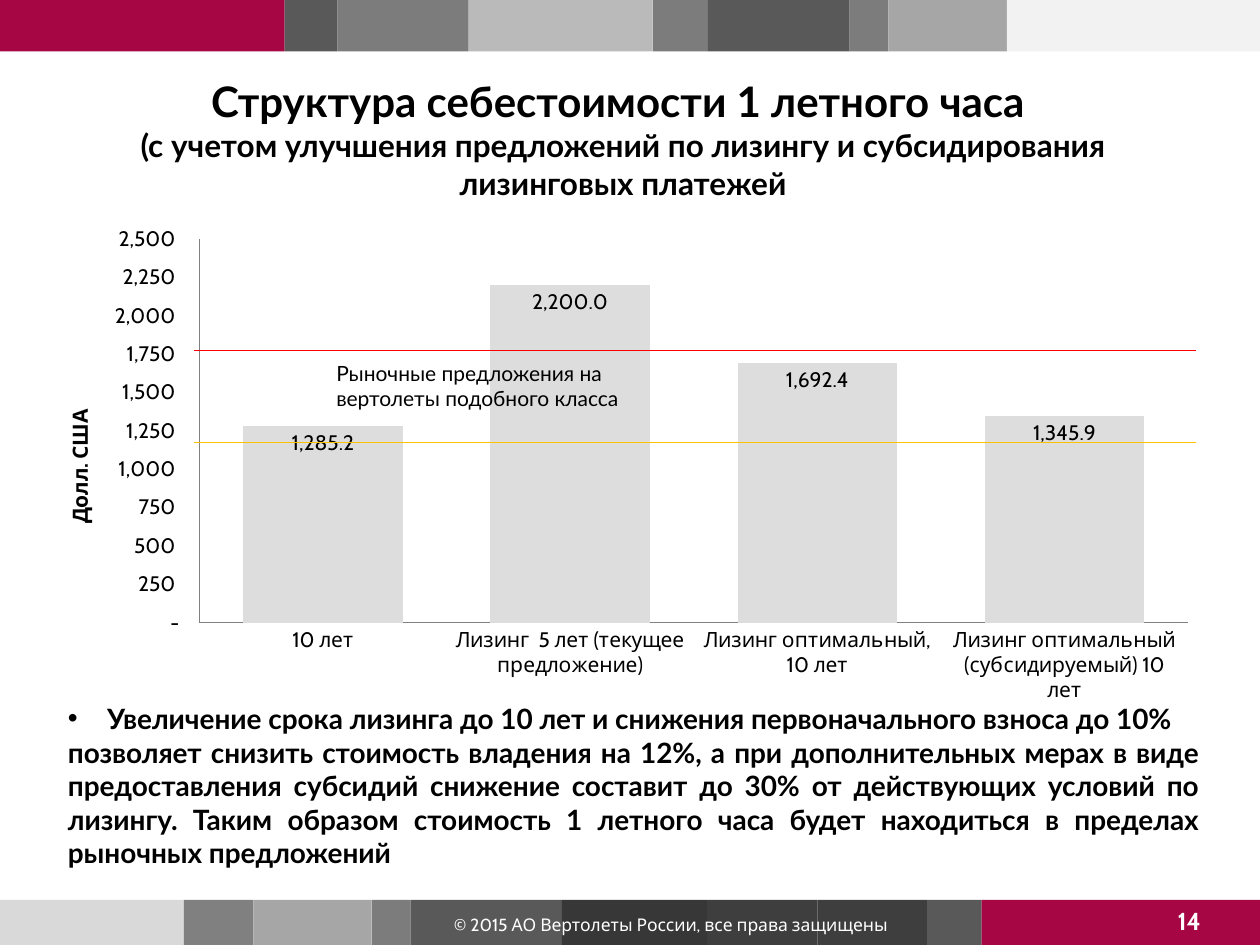
from itertools import pairwise
from lxml.etree import SubElement
from pptx import Presentation
from pptx.chart.data import CategoryChartData
from pptx.dml.color import RGBColor
from pptx.enum.chart import XL_CHART_TYPE, XL_LABEL_POSITION, XL_TICK_MARK
from pptx.enum.shapes import MSO_CONNECTOR, MSO_SHAPE
from pptx.enum.text import PP_ALIGN
from pptx.oxml import parse_xml
from pptx.oxml.ns import nsdecls, qn
from pptx.util import Cm, Pt

THEME = {
    "head": "Lato", "body": "Cabin",
    "ink": "000000", "light": "FFFFFF", "bar": "DDDDDD", "axis": "808080",
    "high": "FF0000", "low": "FFC000",
    "title": 24, "sub": 18, "main": 16, "page": 14, "label": 12, "foot": 10,
}
BANDS = [
    (0, [0, 5.74, 6.81, 9.45, 13.16, 14.27, 17.13, 17.91, 20.3, 25.4],
     ["A60643", "595959", "7C7C7C", "BABABA", "7C7C7C", "595959", "7C7C7C",
      "A6A6A6", "F2F2F2"]),
    (18.14, [0, 3.71, 5.11, 7.49, 8.28, 11.33, 14.25, 16.48, 18.69, 19.79, 25.4],
     ["D9D9D9", "808080", "A6A6A6", "7C7C7C", "595959", "373737", "3E3E3E",
      "3E3E3E", "595959", "A60643"]),
]
TITLE = "Структура себестоимости 1 летного часа "
SUB = ("(с учетом улучшения предложений по лизингу и субсидирования "
       "лизинговых платежей")
POINT = ("Увеличение срока лизинга до 10 лет и снижения первоначального "
         "взноса до 10%")
REST = ("позволяет снизить стоимость владения на 12%, а при дополнительных "
        "мерах в виде предоставления субсидий снижение составит до 30% от "
        "действующих условий по лизингу. Таким образом стоимость 1 летного "
        "часа будет находиться в пределах рыночных предложений")
NOTE = "Рыночные предложения на вертолеты подобного класса"
FOOT = "© 2015 АО Вертолеты России, все права защищены"
PAGE = "14"
UNIT = "Долл. США"
COSTS = [
    ("10 лет", 1285.2),
    ("Лизинг  5 лет (текущее предложение)", 2200),
    ("Лизинг оптимальный, 10 лет", 1692.4),
    ("Лизинг оптимальный (субсидируемый) 10 лет", 1345.9),
]
LIMITS = [(7.06, "high"), (8.92, "low")]


def tint(name):
    return RGBColor.from_string(THEME.get(name, name))


def write(para, text, size="label", face="head", ink="ink", bold=False,
          align=None):
    run = para.add_run()
    run.text = text
    font = run.font
    font.name, font.size, font.bold = THEME[face], Pt(THEME[size]), bold
    font.color.rgb = tint(ink)
    para.alignment = align


def frame(slide, box, pad=True):
    text = slide.shapes.add_textbox(*map(Cm, box)).text_frame
    text.word_wrap = True
    if not pad:
        text.margin_left = text.margin_right = 0
        text.margin_top = text.margin_bottom = 0
    return text


def bullet(para, gap):
    props = para._p.get_or_add_pPr()
    props.set("marL", str(gap))
    props.set("indent", str(-gap))
    SubElement(props, qn("a:buFont")).set("typeface", "Arial")
    SubElement(props, qn("a:buChar")).set("char", "•")


def place(node, index, **spots):
    for old in node.findall(qn("c:layout")):
        node.remove(old)
    inner = '<c:layoutTarget val="inner"/>' if "w" in spots else ""
    modes = "".join(f'<c:{key}Mode val="edge"/>' for key in "xy")
    sizes = "".join(f'<c:{key} val="{val}"/>' for key, val in spots.items())
    node.insert(index, parse_xml(
        f'<c:layout {nsdecls("c")}><c:manualLayout>{inner}{modes}{sizes}'
        "</c:manualLayout></c:layout>"))


def bands(slide):
    for top, edges, fills in BANDS:
        for (left, right), fill in zip(pairwise(edges), fills):
            shape = slide.shapes.add_shape(
                MSO_SHAPE.RECTANGLE, Cm(left), Cm(top), Cm(right - left), Cm(1.04))
            shape.shadow.inherit = False
            shape.fill.solid()
            shape.fill.fore_color.rgb = tint(fill)
            shape.line.fill.background()


def graph(slide):
    data = CategoryChartData()
    data.categories = [name for name, cost in COSTS]
    data.add_series("Series 1", [cost for name, cost in COSTS])
    chart = slide.shapes.add_chart(
        XL_CHART_TYPE.COLUMN_STACKED, Cm(0.53), Cm(4.37), Cm(23.9), Cm(10.01),
        data).chart
    chart.has_legend = chart.has_title = False
    chart.font.name, chart.font.size = THEME["body"], Pt(THEME["label"])
    chart.font.color.rgb = tint("ink")
    plot = chart.plots[0]
    plot.gap_width, plot.overlap, plot.vary_by_categories = 55, 100, False
    fill = plot.series[0].format.fill
    fill.solid()
    fill.fore_color.rgb = tint("bar")
    plot.has_data_labels = True
    labels = plot.data_labels
    labels.show_value, labels.position = True, XL_LABEL_POSITION.INSIDE_END
    labels.number_format, labels.number_format_is_linked = "#,##0.0", False
    for axis in (chart.category_axis, chart.value_axis):
        axis.major_tick_mark = axis.minor_tick_mark = XL_TICK_MARK.NONE
        axis.has_major_gridlines = False
        axis.format.line.color.rgb = tint("axis")
        axis.format.line.width = Pt(0.75)
    axis.minimum_scale, axis.maximum_scale, axis.major_unit = 0, 2500, 250
    ticks = axis.tick_labels
    ticks.number_format = '_-* #,##0_р_._-;\\-* #,##0_р_._-;_-* "-"?'
    ticks.number_format_is_linked = False
    title = axis.axis_title
    write(title.text_frame.paragraphs[0], UNIT, face="body", bold=True)
    body = title.element.find(".//" + qn("a:bodyPr"))
    body.set("rot", "-5400000")
    body.set("vert", "horz")
    place(title.element, 1, x=0.03, y=0.38)
    place(chart.element.find(".//" + qn("c:plotArea")), 0,
          x=0.146, y=0.045, w=0.834, h=0.773)


def limits(slide):
    for top, ink in LIMITS:
        line = slide.shapes.add_connector(
            MSO_CONNECTOR.STRAIGHT, Cm(3.91), Cm(top), Cm(24.1), Cm(top))
        line.line.color.rgb = tint(ink)
        line.line.width = Pt(0.75)
        SubElement(line.element.spPr, qn("a:effectLst"))


def main():
    """Build the slide on the cost structure of one flight hour."""
    deck = Presentation()
    deck.slide_width, deck.slide_height = Cm(25.4), Cm(19.05)
    slide = deck.slides.add_slide(deck.slide_layouts[6])
    bands(slide)
    mid = PP_ALIGN.CENTER
    para = frame(slide, (1.98, 1.52, 21.16, 1.32), pad=False).paragraphs[0]
    write(para, TITLE, size="title", bold=True, align=mid)
    para.add_line_break()
    write(para, SUB, size="sub", bold=True, align=mid)
    write(frame(slide, (23.44, 18.14, 1.07, 1.02)).paragraphs[0], PAGE,
          size="page", face="body", ink="light", bold=True, align=mid)
    write(frame(slide, (8.51, 18.31, 10.03, 0.74)).paragraphs[0], FOOT,
          size="foot", face="body", ink="light", align=mid)
    text = frame(slide, (1.12, 14.02, 23.32, 3.68))
    bullet(text.paragraphs[0], Cm(0.79))
    write(text.paragraphs[0], POINT, size="main", bold=True)
    write(text.add_paragraph(), REST, size="main", bold=True,
          align=PP_ALIGN.JUSTIFY)
    graph(slide)
    limits(slide)
    write(frame(slide, (6.53, 7.14, 6.32, 1.27)).paragraphs[0], NOTE)
    deck.save("out.pptx")


if __name__ == "__main__":
    main()
